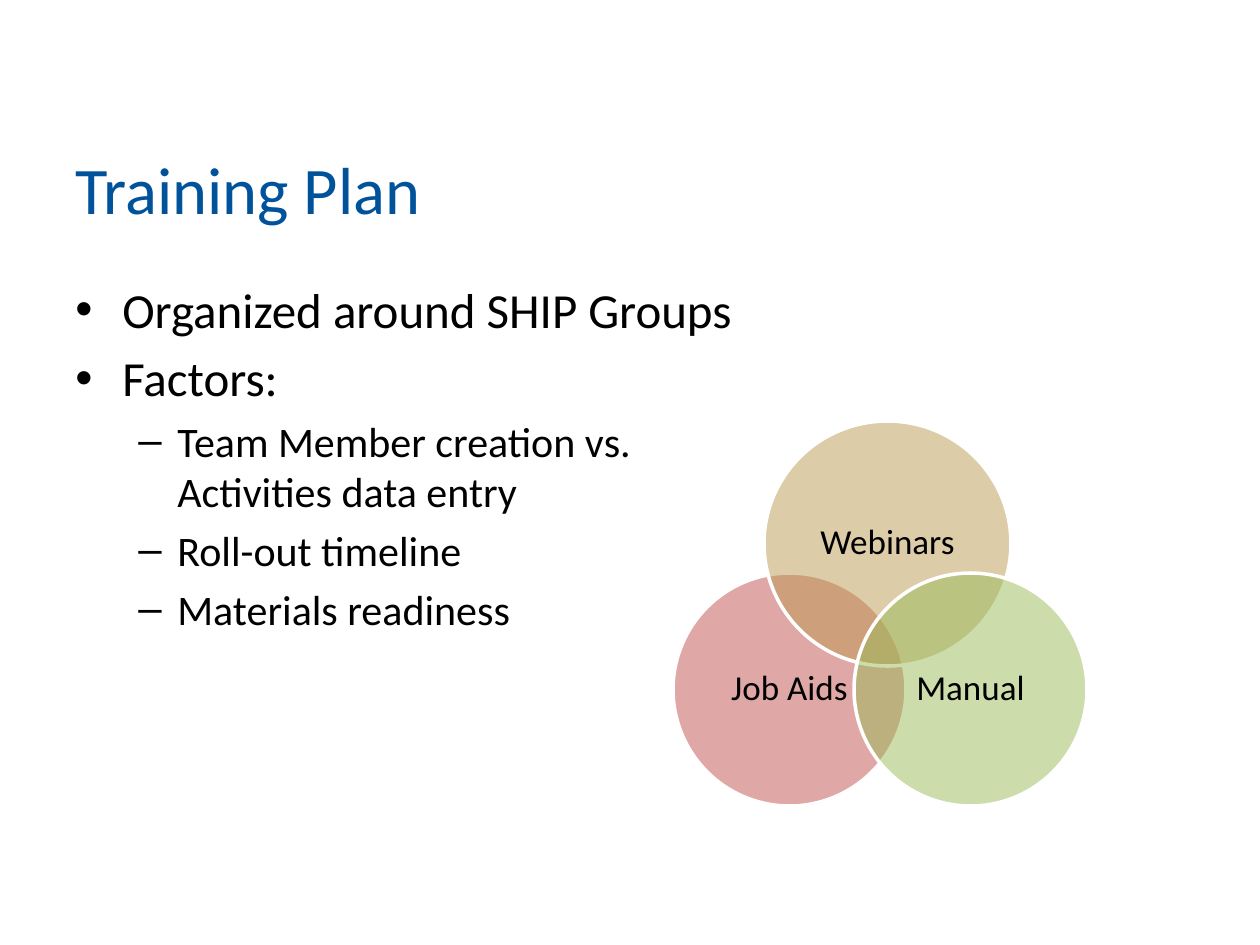
from lxml.etree import SubElement
from pptx import Presentation
from pptx.dml.color import RGBColor
from pptx.enum.shapes import MSO_SHAPE
from pptx.enum.text import MSO_ANCHOR, PP_ALIGN
from pptx.oxml.ns import qn
from pptx.util import Emu, Pt

EMU_PER_PX = 914400 / 126


def px(length):
    """Turn whole pixels into EMU."""
    return Emu(round(length * EMU_PER_PX))


def color(hex_code):
    """Turn a hex string into a colour."""
    return RGBColor.from_string(hex_code)


class TrainingSlide:
    """Holds the style and the current slide."""

    font = "Calibri"
    ink = "000000"
    accent = "00529B"
    levels = [("•", 47, 47, 28), ("–", 102, 39, 24)]

    def __init__(self, deck):
        """Add a blank slide to the deck."""
        self.slide = deck.slides.add_slide(deck.slide_layouts[6])

    def style(self, font, size, hex_code):
        """Set typeface, size and colour."""
        font.name = self.font
        font.size = Pt(size)
        font.color.rgb = color(hex_code)

    def frame(self, left, top, width, height):
        """Add a wrapping text box and return its frame."""
        box = self.slide.shapes.add_textbox(px(left), px(top), px(width), px(height))
        box.text_frame.word_wrap = True
        return box.text_frame

    def title(self, text, *place):
        """Add the heading."""
        heading = self.frame(*place)
        heading.vertical_anchor = MSO_ANCHOR.MIDDLE
        run = heading.paragraphs[0].add_run()
        run.text = text
        self.style(run.font, 38, self.accent)

    def outline(self, points, *place):
        """Add a two-level bulleted list."""
        body = self.frame(*place)
        for index, (level, lines) in enumerate(points):
            mark, margin, hang, size = self.levels[level]
            point = body.add_paragraph() if index else body.paragraphs[0]
            point.level = level
            point.space_before = Pt(size * 0.2 if index else 0)
            properties = point._p.get_or_add_pPr()
            properties.set("marL", str(px(margin)))
            properties.set("indent", str(px(-hang)))
            SubElement(properties, qn("a:buFont")).set("typeface", "Arial")
            SubElement(properties, qn("a:buChar")).set("char", mark)
            self.style(point.font, size, self.ink)
            for number, line in enumerate(lines):
                if number:
                    point.add_line_break()
                run = point.add_run()
                run.text = line
                self.style(run.font, size, self.ink)

    def circle(self, text, fill, left, top, width, height):
        """Add a half-transparent labelled circle."""
        circle = self.slide.shapes.add_shape(
            MSO_SHAPE.OVAL, px(left), px(top), px(width), px(height))
        circle.shadow.inherit = False
        circle.fill.solid()
        circle.fill.fore_color.rgb = color(fill)
        tint = circle.fill._xPr.find(qn("a:solidFill"))[0]
        SubElement(tint, qn("a:alpha")).set("val", "50000")
        circle.line.color.rgb = color("FFFFFF")
        circle.line.width = Pt(2)
        label = circle.text_frame
        label.word_wrap = True
        label.vertical_anchor = MSO_ANCHOR.MIDDLE
        label.margin_left = label.margin_right = px(10)
        label.margin_top = label.margin_bottom = px(10)
        paragraph = label.paragraphs[0]
        paragraph.alignment = PP_ALIGN.CENTER
        paragraph.line_spacing = 0.9
        run = paragraph.add_run()
        run.text = text
        self.style(run.font, 20, self.ink)


def main():
    """Build the training plan slide."""
    deck = Presentation()
    deck.slide_width, deck.slide_height = px(1260), px(945)
    plan = TrainingSlide(deck)
    plan.title("Training Plan", 63, 146, 1134, 84)
    plan.outline([
        (0, ["Organized around SHIP Groups"]),
        (0, ["Factors:"]),
        (1, ["Team Member creation vs. ", "Activities data entry"]),
        (1, ["Roll-out timeline"]),
        (1, ["Materials readiness"]),
    ], 63, 273, 1134, 571)
    plan.circle("Job Aids", "C0504D", 673, 573, 233, 233)
    plan.circle("Webinars", "BD9B53", 764, 421, 247, 245)
    plan.circle("Manual", "9BBB59", 854, 573, 233, 233)
    deck.save("out.pptx")


if __name__ == "__main__":
    main()
